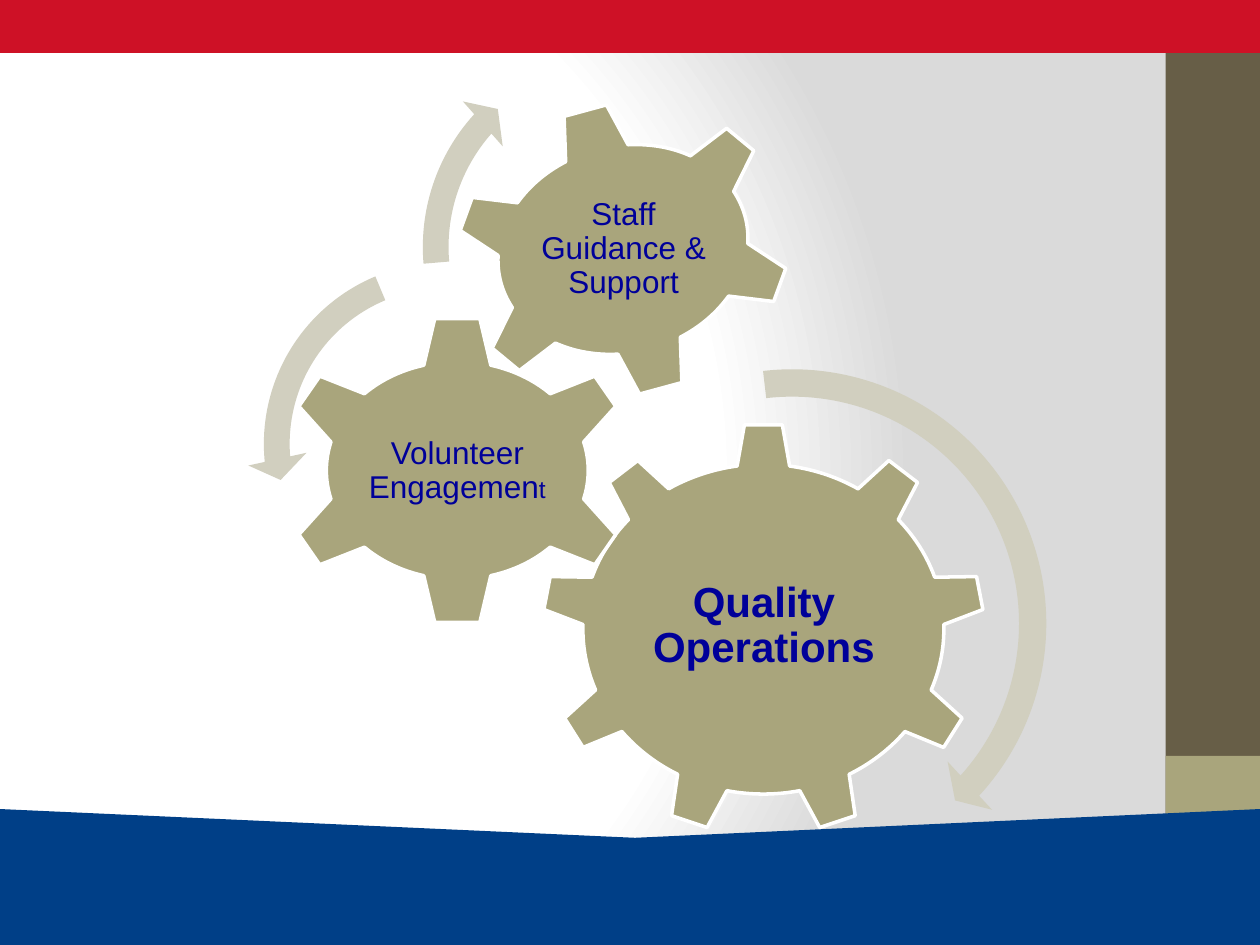
from lxml import etree
from pptx import Presentation
from pptx.dml.color import RGBColor
from pptx.enum.shapes import MSO_SHAPE
from pptx.enum.text import MSO_ANCHOR, PP_ALIGN
from pptx.util import Cm, Pt

RECTANGLE = MSO_SHAPE.RECTANGLE
GEAR_6, GEAR_9 = MSO_SHAPE.GEAR_6, MSO_SHAPE.GEAR_9
ARROW = MSO_SHAPE.CIRCULAR_ARROW
LEFT_ARROW = MSO_SHAPE.LEFT_CIRCULAR_ARROW
MIDDLE, CENTER = MSO_ANCHOR.MIDDLE, PP_ALIGN.CENTER

WHITE = RGBColor(0xFF, 0xFF, 0xFF)
GREY = RGBColor(0xDA, 0xDA, 0xDA)
BROWN = RGBColor(0x67, 0x5E, 0x47)
KHAKI = RGBColor(0xA9, 0xA5, 0x7C)
PALE_KHAKI = RGBColor(0xD1, 0xCF, 0xBF)
BLUE = RGBColor(0x00, 0x3F, 0x87)
RED = RGBColor(0xCE, 0x11, 0x26)
NAVY = RGBColor(0x00, 0x00, 0x99)

WIDTH, HEIGHT = 25.4, 19.05
FONT = "Arial"

BACKGROUND = """
<p:bg xmlns:p="http://schemas.openxmlformats.org/presentationml/2006/main"
      xmlns:a="http://schemas.openxmlformats.org/drawingml/2006/main">
  <p:bgPr>
    <a:gradFill rotWithShape="1">
      <a:gsLst>{stops}</a:gsLst>
      <a:path path="circle">
        <a:fillToRect l="20000" t="50000" r="100000" b="50000"/>
      </a:path>
    </a:gradFill>
    <a:effectLst/>
  </p:bgPr>
</p:bg>"""


class GearSlide:
    def __init__(self, slide):
        self.slide = slide
        self.shapes = slide.shapes

    def background(self, stops):
        """Radial gradient from (percent, colour) stops."""
        stop_xml = "".join(
            f'<a:gs pos="{percent * 1000}"><a:srgbClr val="{colour}"/></a:gs>'
            for percent, colour in stops)
        root = etree.fromstring(BACKGROUND.format(stops=stop_xml))
        self.slide.element.cSld.insert(0, root)

    def paint(self, shape, fill, outline=None):
        shape.shadow.inherit = False
        shape.fill.solid()
        shape.fill.fore_color.rgb = fill
        if outline is None:
            shape.line.fill.background()
        else:
            shape.line.color.rgb = outline
            shape.line.width = Pt(2)
        return shape

    def preset(self, kind, box, fill, outline=None):
        shape = self.shapes.add_shape(kind, *map(Cm, box))
        return self.paint(shape, fill, outline)

    def polygon(self, points, fill):
        start, *rest = [(Cm(x), Cm(y)) for x, y in points]
        builder = self.shapes.build_freeform(*start)
        builder.add_line_segments(rest, close=True)
        self.paint(builder.convert_to_shape(), fill)

    def gear(self, kind, box, rotation=0):
        self.preset(kind, box, KHAKI, WHITE).rotation = rotation

    def label(self, box, runs, bold=False, rotation=0):
        """Centred text from (wording, point size) runs."""
        label = self.shapes.add_textbox(*map(Cm, box))
        label.rotation = rotation
        frame = label.text_frame
        frame.word_wrap = True
        frame.vertical_anchor = MIDDLE
        frame.margin_left = frame.margin_right = Cm(0.08)
        frame.margin_top = frame.margin_bottom = Cm(0.08)
        paragraph = frame.paragraphs[0]
        paragraph.alignment = CENTER
        paragraph.line_spacing = 0.9
        for wording, size in runs:
            run = paragraph.add_run()
            run.text = wording
            run.font.name = FONT
            run.font.size = Pt(size)
            run.font.bold = bold
            run.font.color.rgb = NAVY

    def turn_arrow(self, kind, left, top, side, adjustments):
        arrow = self.preset(kind, (left, top, side, side), PALE_KHAKI)
        for index, value in enumerate(adjustments):
            arrow.adjustments[index] = value


def main():
    deck = Presentation()
    deck.slide_width, deck.slide_height = Cm(WIDTH), Cm(HEIGHT)
    page = GearSlide(deck.slides.add_slide(deck.slide_layouts[6]))

    page.background([(0, WHITE), (75, WHITE), (100, GREY)])
    page.preset(RECTANGLE, (23.5, 0, 1.9, HEIGHT), BROWN)
    page.preset(RECTANGLE, (23.5, 15.24, 1.9, 1.9), KHAKI)
    page.polygon([(0, 16.31), (12.8, 16.89), (WIDTH, 16.31),
                  (WIDTH, HEIGHT), (0, HEIGHT)], BLUE)
    page.preset(RECTANGLE, (0, 0, WIDTH, 1.07), RED)

    page.gear(GEAR_9, (10.92, 8.53, 8.94, 8.31))
    page.label((12.67, 10.49, 5.46, 4.27), [("Quality Operations", 24)], bold=True)
    page.gear(GEAR_6, (5.64, 6.35, 7.16, 6.27))
    page.label((7.34, 7.95, 3.76, 3.1), [("Volunteer Engagemen", 18), ("t", 14)])
    page.gear(GEAR_6, (9.12, 2.06, 6.88, 5.94), rotation=344.8)
    page.label((10.69, 3.3, 3.76, 3.45), [("Staff Guidance & Support", 18)],
               rotation=359.8)

    page.turn_arrow(ARROW, 10.46, 7.06, 11.02, (0.05, 2.99, 25.43, 158.06, 0.06))
    page.turn_arrow(LEFT_ARROW, 4.98, 4.95, 8, (0.065, 4.3, 104.89, 148.38, 0.075))
    page.turn_arrow(ARROW, 8.18, 0.66, 8.64, (0.06, 3.94, 133.14, 105.08, 0.07))

    deck.save("out.pptx")


if __name__ == "__main__":
    main()
